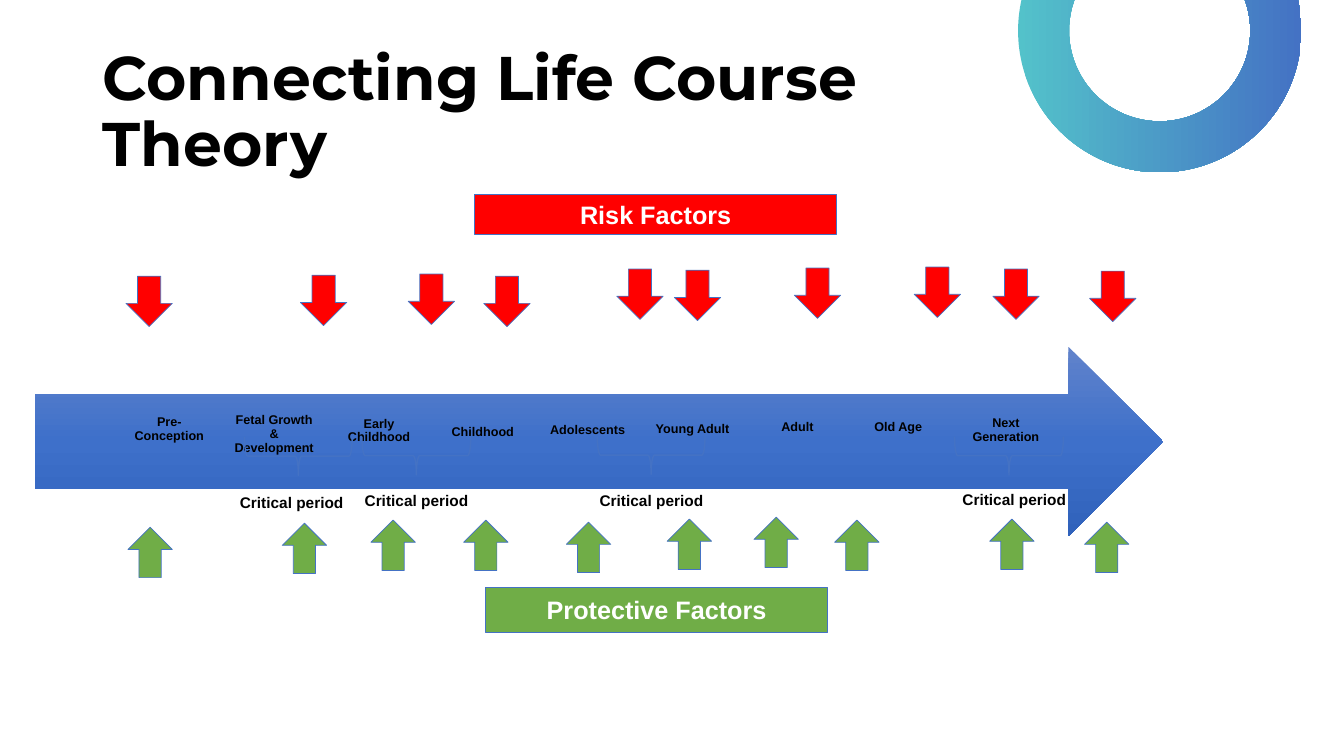
from typing import NamedTuple

from lxml import etree
from pptx import Presentation
from pptx.dml.color import RGBColor
from pptx.enum.shapes import MSO_SHAPE
from pptx.enum.text import MSO_ANCHOR, MSO_AUTO_SIZE, PP_ALIGN
from pptx.oxml.ns import qn
from pptx.util import Pt

RECT, DONUT, BRACE = MSO_SHAPE.RECTANGLE, MSO_SHAPE.DONUT, MSO_SHAPE.RIGHT_BRACE
RIGHT, DOWN, UP = MSO_SHAPE.RIGHT_ARROW, MSO_SHAPE.DOWN_ARROW, MSO_SHAPE.UP_ARROW
LEFT, CENTER = PP_ALIGN.LEFT, PP_ALIGN.CENTER
TOP, MIDDLE = MSO_ANCHOR.TOP, MSO_ANCHOR.MIDDLE
FIT = MSO_AUTO_SIZE.SHAPE_TO_FIT_TEXT

BLACK = RGBColor(0x00, 0x00, 0x00)
WHITE = RGBColor(0xFF, 0xFF, 0xFF)
RED = RGBColor(0xFF, 0x00, 0x00)
GREEN = RGBColor(0x70, 0xAD, 0x47)
BLUE = RGBColor(0x44, 0x72, 0xC4)
TEAL = RGBColor(0x53, 0xC2, 0xCA)
PALE = RGBColor(0x61, 0x83, 0xCB)
MID = RGBColor(0x3E, 0x70, 0xCA)
DEEP = RGBColor(0x30, 0x62, 0xBB)


class Box(NamedTuple):
    x: float
    y: float
    w: float
    h: float


class Stage(NamedTuple):
    name: str
    x: float
    y: float
    h: float = 46.1


class Factor(NamedTuple):
    name: str
    box: Box
    color: RGBColor
    kind: MSO_SHAPE
    width: float
    spots: list[tuple[float, float]]


class Period(NamedTuple):
    brace: Box
    x: float
    y: float


STAGES = [
    Stage("Pre-Conception", 90, 283.7),
    Stage("Fetal Growth & Development", 164.9, 287.3),
    Stage("Early Childhood", 239.8, 270.7, 74.2),
    Stage("Childhood", 313.9, 270.7, 76.3),
    Stage("Adolescents", 388.8, 267.1, 80.6),
    Stage("Young Adult", 463.7, 283.7),
    Stage("Adult", 538.6, 282.2),
    Stage("Old Age", 610.6, 282.2),
    Stage("Next Generation", 687.6, 284.4),
]
FACTORS = [
    Factor("Risk Factors", Box(339.1, 139, 258.5, 28.1), RED, DOWN, 33.1, [
        (90, 197.3), (214.6, 196.6), (291.6, 195.8), (345.6, 197.3),
        (440.6, 192.2), (481.7, 193), (567.4, 191.5), (653, 190.8),
        (709.2, 192.2), (778.3, 193.7)]),
    Factor("Protective Factors", Box(347, 419.8, 244.1, 31.7), GREEN, UP, 31.7, [
        (91.4, 376.6), (201.6, 373.7), (265, 371.5), (331.2, 371.5),
        (404.6, 373), (476.6, 370.8), (538.6, 369.4), (596.2, 371.5),
        (707, 370.8), (774.7, 373)]),
]
PERIODS = [
    Period(Box(199.4, 287.3, 27.4, 77), 164.2, 348.5),
    Period(Box(283.7, 286.6, 27.4, 77.8), 253.4, 347),
    Period(Box(451.4, 286.6, 27.4, 77), 421.2, 347),
    Period(Box(707, 286.6, 27.4, 77.8), 680.4, 346.3),
]

deck = Presentation()
deck.slide_width, deck.slide_height = Pt(960), Pt(540)
slide = deck.slides.add_slide(deck.slide_layouts[6])


def draw(kind: MSO_SHAPE, box: Box, fill: RGBColor | None = None,
         line: float = 0):
    shape = slide.shapes.add_shape(kind, *map(Pt, box))
    shape.shadow.inherit = False
    if fill is None:
        shape.fill.background()
    else:
        shape.fill.solid()
        shape.fill.fore_color.rgb = fill
    if line:
        shape.line.color.rgb = BLUE
        shape.line.width = Pt(line)
    else:
        shape.line.fill.background()
    return shape


def shade(shape, angle: int, *colors: RGBColor) -> None:
    """Fill with evenly spaced gradient stops."""
    shape.fill.gradient()
    shape.fill.gradient_angle = angle
    stops = shape.element.spPr.find(qn("a:gradFill")).find(qn("a:gsLst"))
    for stop in list(stops):
        stops.remove(stop)
    for i, color in enumerate(colors):
        place = str(100000 * i // (len(colors) - 1))
        stop = etree.SubElement(stops, qn("a:gs"), pos=place)
        etree.SubElement(stop, qn("a:srgbClr"), val=str(color))


def write(shape, text: str, *, size: float, font: str = "Arial",
          color: RGBColor = BLACK, align: PP_ALIGN = CENTER,
          anchor: MSO_ANCHOR = MIDDLE, wrap: bool = True,
          side: float = 7.2, lead: float = 1, after: float = 0) -> None:
    frame = shape.text_frame
    frame.word_wrap = wrap
    frame.vertical_anchor = anchor
    frame.margin_left = frame.margin_right = Pt(side)
    if not wrap:
        frame.auto_size = FIT
    para = frame.paragraphs[0]
    para.alignment = align
    para.line_spacing = lead
    para.space_after = Pt(after)
    run = para.add_run()
    run.text = text
    run.font.name, run.font.size = font, Pt(size)
    run.font.bold = True
    run.font.color.rgb = color


def label(box: Box, text: str, **style) -> None:
    write(slide.shapes.add_textbox(*map(Pt, box)), text, **style)


# Ring and title
ring = draw(DONUT, Box(727.2, -79.2, 202.3, 202.3))
ring.adjustments[0] = 0.18
shade(ring, 0, TEAL, BLUE)
label(Box(66.2, 28.8, 673.2, 104.4), "Connecting Life Course Theory",
      size=44, font="Montserrat", align=LEFT, lead=0.9)

# Life course arrow with its stages
course = draw(RIGHT, Box(25.2, 247.7, 805.7, 135.4))
shade(course, 270, PALE, MID, DEEP)
for stage in STAGES:
    label(Box(stage.x, stage.y, 61.9, stage.h), stage.name,
          size=9, side=0, lead=0.9, after=3.15)

# Factors and their arrows
for factor in FACTORS:
    for x, y in factor.spots:
        draw(factor.kind, Box(x, y, factor.width, 36), factor.color, 0.5)
    bar = draw(RECT, factor.box, factor.color, 0.5)
    write(bar, factor.name, size=18, color=WHITE)

# Critical periods
for period in PERIODS:
    draw(BRACE, period.brace, line=1).rotation = 90
    label(Box(period.x, period.y, 89.3, 20.9), "Critical period",
          size=11, align=LEFT, anchor=TOP, wrap=False)

deck.save("out.pptx")
